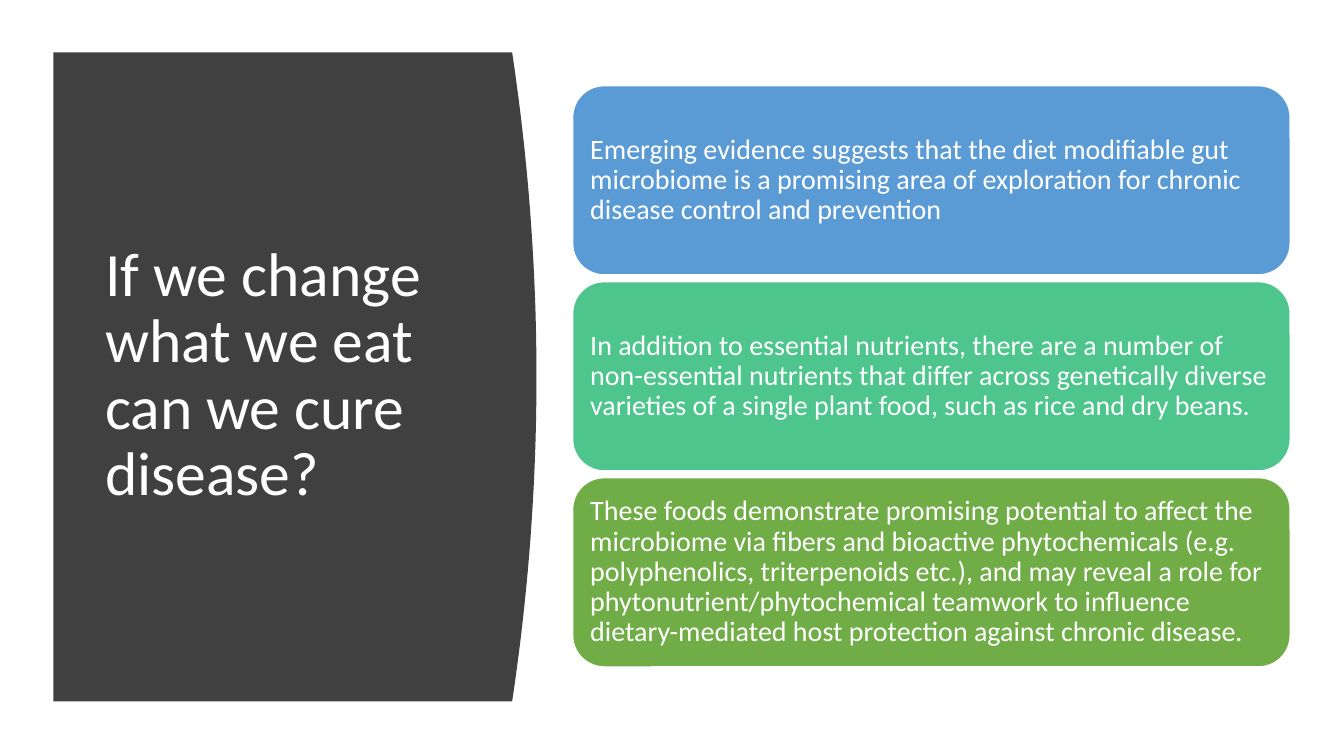
from pptx import Presentation
from pptx.dml.color import RGBColor
from pptx.enum.shapes import MSO_SHAPE
from pptx.enum.text import MSO_ANCHOR, PP_ALIGN
from pptx.util import Pt

ROUND = MSO_SHAPE.ROUNDED_RECTANGLE
MIDDLE = MSO_ANCHOR.MIDDLE
LEFT = PP_ALIGN.LEFT

COLORS = {
    "panel": "404040",
    "white": "FFFFFF",
    "blue": "5B9BD5",
    "teal": "4DC58D",
    "green": "70AD47",
}


def color(name):
    return RGBColor.from_string(COLORS[name])


def write(shape, text, size, inset_x, inset_y):
    frame = shape.text_frame
    frame.word_wrap = True
    frame.vertical_anchor = MIDDLE
    frame.margin_left = frame.margin_right = Pt(inset_x)
    frame.margin_top = frame.margin_bottom = Pt(inset_y)
    para = frame.paragraphs[0]
    para.alignment = LEFT
    para.line_spacing = 0.9
    run = para.add_run()
    run.text = text
    run.font.size = Pt(size)
    run.font.name = "Calibri"
    run.font.color.rgb = color("white")


deck = Presentation()
deck.slide_width, deck.slide_height = Pt(960), Pt(540)
slide = deck.slides.add_slide(deck.slide_layouts[6])
shapes = slide.shapes

# Dark panel: its right side is a shallow parabola
left, top, base = 38.2, 37.4, 501.1
edge, bulge, steps = 365.8, 17.4, 40
curve = []
for i in range(steps + 1):
    t = i / steps
    x = edge + bulge * 4 * t * (1 - t)
    curve.append((Pt(x), Pt(top + t * (base - top))))
outline = shapes.build_freeform(Pt(left), Pt(top), scale=1.0)
outline.add_line_segments(curve + [(Pt(left), Pt(base))], close=True)
panel = outline.convert_to_shape()
panel.shadow.inherit = False
panel.fill.solid()
panel.fill.fore_color.rgb = color("panel")
panel.line.fill.background()

# Title
title = shapes.add_textbox(Pt(68), Pt(80), Pt(269), Pt(377))
write(title, "If we change what we eat can we cure disease?",
      size=44, inset_x=7.2, inset_y=3.6)

# Stacked cards
cards = [
    ("blue", "Emerging evidence suggests that the diet modifiable gut "
     "microbiome is a promising area of exploration for chronic disease "
     "control and prevention"),
    ("teal", "In addition to essential nutrients, there are a number of "
     "non-essential nutrients that differ across genetically diverse "
     "varieties of a single plant food, such as rice and dry beans."),
    ("green", "These foods demonstrate promising potential to affect the "
     "microbiome via fibers and bioactive phytochemicals (e.g. "
     "polyphenolics, triterpenoids etc.), and may reveal a role for "
     "phytonutrient/phytochemical teamwork to influence dietary-mediated "
     "host protection against chronic disease."),
]
first, pitch = 61.2, 140
for i, (fill, text) in enumerate(cards):
    card = shapes.add_shape(ROUND, Pt(409), Pt(first + i * pitch),
                            Pt(512.6), Pt(135.2))
    card.shadow.inherit = False
    card.fill.solid()
    card.fill.fore_color.rgb = color(fill)
    card.line.color.rgb = color("white")
    card.line.width = Pt(1)
    write(card, text, size=20, inset_x=6, inset_y=6)

deck.save("out.pptx")
